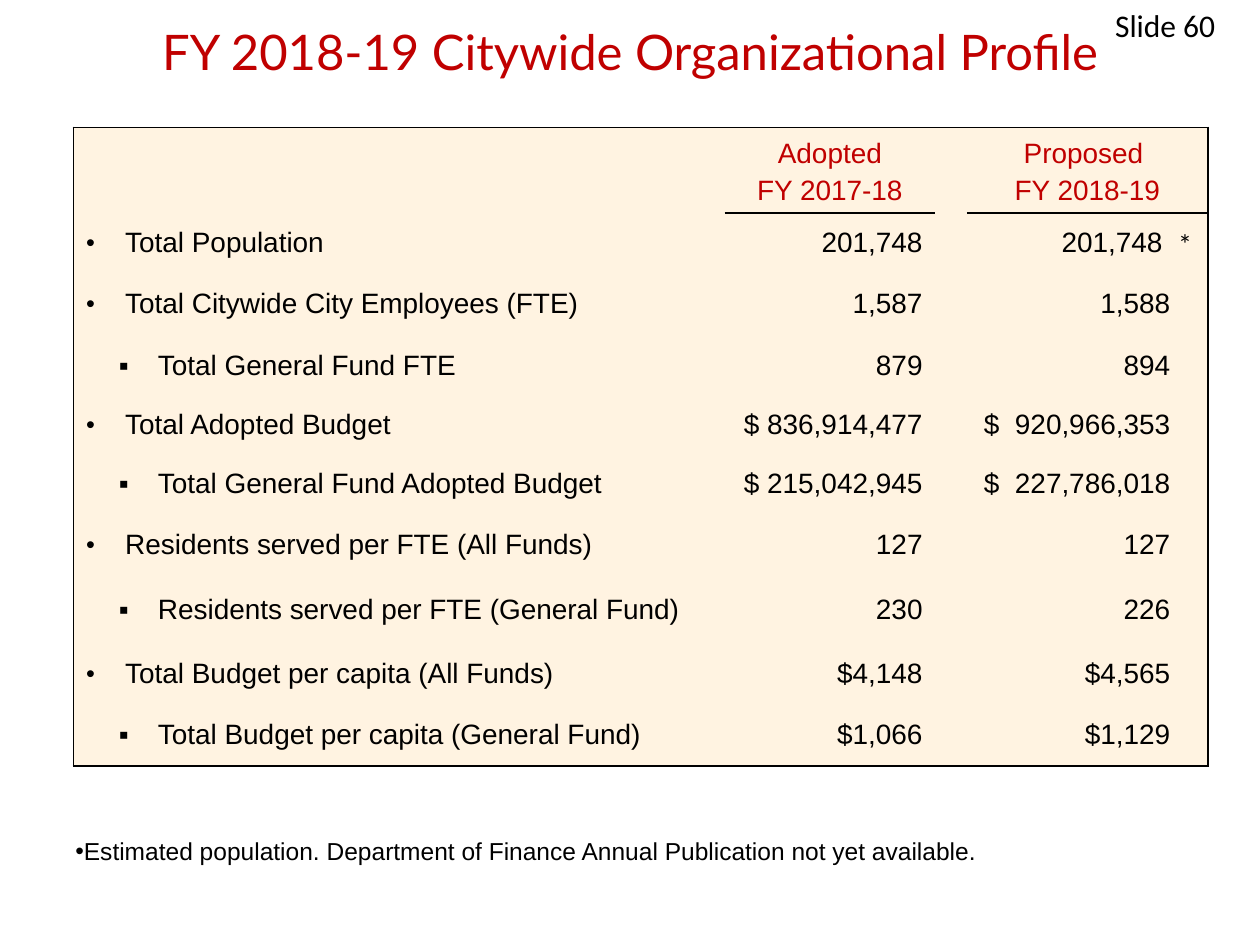
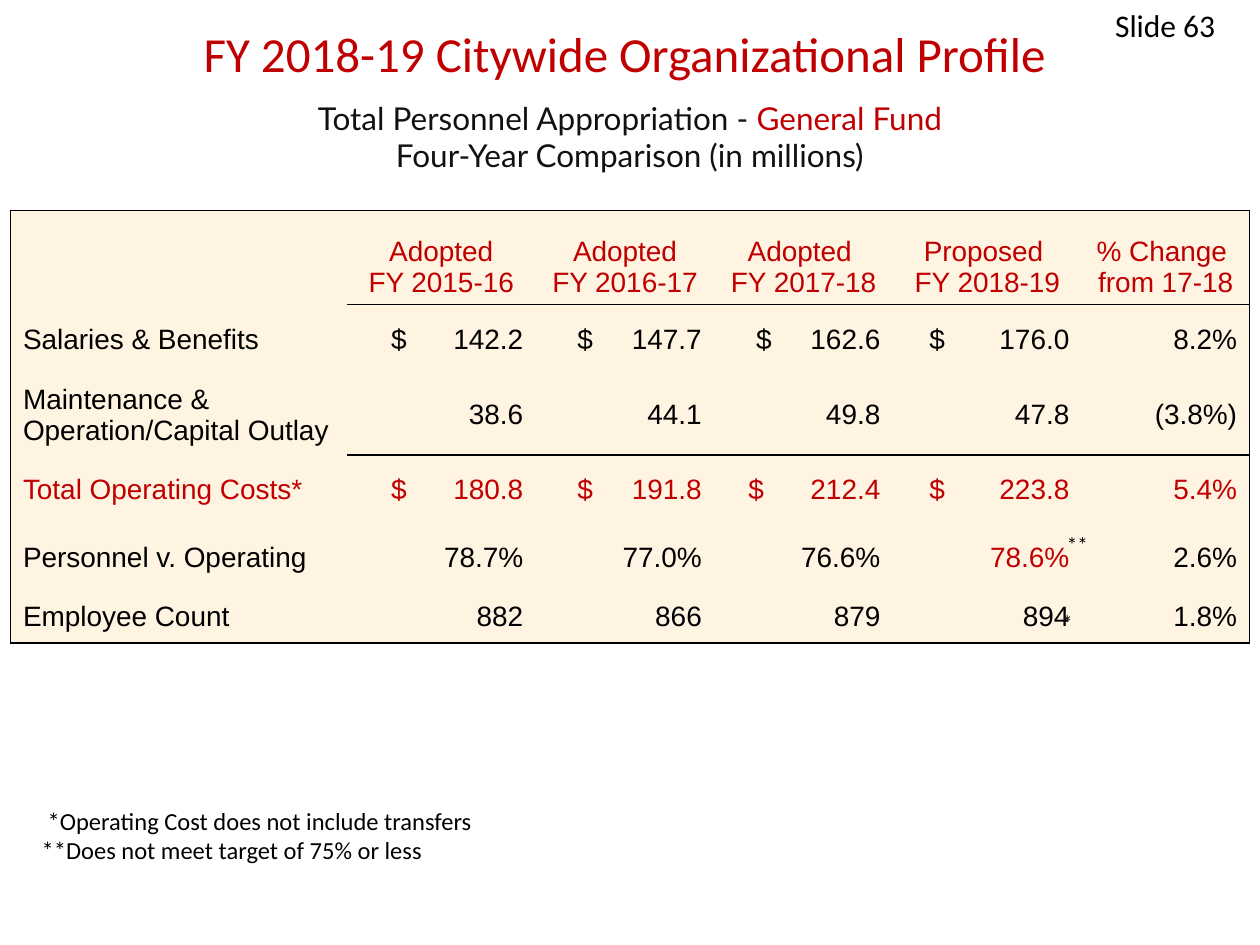
from lxml import etree
from pptx import Presentation
from pptx.dml.color import RGBColor
from pptx.enum.text import MSO_ANCHOR, PP_ALIGN
from pptx.oxml.ns import qn
from pptx.util import Cm, Pt

LEFT, CENTER, RIGHT = PP_ALIGN.LEFT, PP_ALIGN.CENTER, PP_ALIGN.RIGHT
TOP, MIDDLE, BOTTOM = MSO_ANCHOR.TOP, MSO_ANCHOR.MIDDLE, MSO_ANCHOR.BOTTOM
RED, BLACK, DARK, CREAM = "C00000", "000000", "111111", "FFF3E1"
TITLE = "FY 2018-19 Citywide Organizational Profile"
SPACE_WIDTH = 4.45  # points, Arial 16


def rgb(hex_color):
    return RGBColor.from_string(hex_color)


def add_element(parent, tag, **attributes):
    element = etree.SubElement(parent, qn(tag))
    for name, value in attributes.items():
        element.set(name, str(value))
    return element


def write(tf, text, size=16, font="Arial", color=BLACK, align=LEFT, gap=0,
          bullet=None, bullet_size=100, indent=0, hang=0):
    """Fill a text frame; a line is a string or a list of (text, color, tracking) runs.

    gap is the space between paragraphs in percent, tracking is in points.
    """
    lines = text.split("\n") if isinstance(text, str) else text
    for i, line in enumerate(lines):
        p = tf.add_paragraph() if i else tf.paragraphs[0]
        pPr = p._p.get_or_add_pPr()
        pPr.set("marL", str(Cm(indent)))
        pPr.set("indent", str(-Cm(hang)))
        if i and gap:
            add_element(add_element(pPr, "a:spcBef"), "a:spcPct", val=gap * 1000)
        if bullet:
            add_element(pPr, "a:buSzPct", val=bullet_size * 1000)
            add_element(pPr, "a:buFont", typeface="Arial")
            add_element(pPr, "a:buChar", char=bullet)
        p.alignment = align
        runs = [(line, color, 0)] if isinstance(line, str) else line
        for run_text, run_color, tracking in runs:
            r = p.add_run()
            r.text = run_text
            r.font.size, r.font.name, r.font.bold = Pt(size), font, False
            r.font.color.rgb = rgb(run_color)
            if tracking:
                r._r.get_or_add_rPr().set("spc", str(round(tracking * 100)))


def add_text(s, x, y, w, h, text, anchor=TOP, **fmt):
    tf = s.shapes.add_textbox(Cm(x), Cm(y), Cm(w), Cm(h)).text_frame
    tf.word_wrap = True
    tf.vertical_anchor = anchor
    write(tf, text, **fmt)


def add_heading(s, y, title, font, number):
    add_text(s, 0.85, y, 23.7, 1.7, title, anchor=MIDDLE, size=28, font=font,
             color=RED, align=CENTER)
    add_text(s, 22.23, 0, 3.17, 1.27, f"Slide {number}", size=18, font="Calibri")


def style_cell(cell, edges):
    """Draw the named sides (L, R, T, B), clear the others and fill the cell."""
    tcPr = cell._tc.get_or_add_tcPr()
    for side in "LRTB":
        ln = add_element(tcPr, f"a:ln{side}", w=Pt(1))
        if side in edges:
            add_element(add_element(ln, "a:solidFill"), "a:srgbClr", val=BLACK)
        else:
            add_element(ln, "a:noFill")
    cell.fill.solid()
    cell.fill.fore_color.rgb = rgb(CREAM)


def add_grid(s, x, y, widths, heights, rules):
    """Add an outlined cream table; rules holds the (row, column) cells underlined."""
    table = s.shapes.add_table(len(heights), len(widths), Cm(x), Cm(y),
                               Cm(sum(widths)), Cm(sum(heights))).table
    table.first_row = table.horz_banding = False
    for column, width in zip(table.columns, widths):
        column.width = Cm(width)
    for row, height in zip(table.rows, heights):
        row.height = Cm(height)
    last_row, last_col = len(heights) - 1, len(widths) - 1
    for i in range(len(heights)):
        for j in range(len(widths)):
            sides = {"L": j == 0, "R": j == last_col,
                     "T": i == 0 or (i - 1, j) in rules,
                     "B": i == last_row or (i, j) in rules}
            style_cell(table.cell(i, j), [k for k, on in sides.items() if on])
    return table


def fill_cell(cell, text, anchor=MIDDLE, **fmt):
    cell.vertical_anchor = anchor
    write(cell.text_frame, text, **fmt)


def fill_amount(cell, amount, color=BLACK):
    """Write a figure flush right; (spaces, figure) puts a dollar sign that far before it."""
    if isinstance(amount, tuple):
        spaces, figure = amount
        amount = [[("$", color, 0), (" ", color, (spaces - 1) * SPACE_WIDTH),
                   (figure, color, 0)]]
    fill_cell(cell, amount, color=color, align=RIGHT)


PROFILE = [
    (0, "Total Population", "201,748", "201,748 "),
    (0, "Total Citywide City Employees (FTE)", "1,587", "1,588"),
    (1, "Total General Fund FTE", "879", "894"),
    (0, "Total Adopted Budget", (1, "836,914,477"), (2, "920,966,353")),
    (1, "Total General Fund Adopted Budget", (1, "215,042,945"), (2, "227,786,018")),
    (0, "Residents served per FTE (All Funds)", "127", "127"),
    (1, "Residents served per FTE (General Fund)", "230", "226"),
    (0, "Total Budget per capita (All Funds)", "$4,148", "$4,565"),
    (1, "Total Budget per capita (General Fund)", "$1,066", "$1,129"),
]
LEVELS = [dict(bullet="•", bullet_size=90, indent=0.79, hang=0.79),
          dict(bullet="▪", indent=1.45, hang=0.79)]


def profile_table(s, x, y):
    widths = [13.13, 4.24, 0.64, 4.86]
    heights = [1.61, 1.22, 1.24, 1.24, 1.14, 1.24, 1.24, 1.35, 1.24, 1.24]
    table = add_grid(s, x, y, widths, heights, {(0, 1), (0, 3)})
    for j, text in (1, "Adopted\nFY 2017-18"), (3, "Proposed \nFY 2018-19"):
        fill_cell(table.cell(0, j), text, anchor=BOTTOM, color=RED, align=CENTER, gap=20)
    for i, (level, label, adopted, proposed) in enumerate(PROFILE, 1):
        fill_cell(table.cell(i, 0), label, **LEVELS[level])
        fill_amount(table.cell(i, 1), adopted)
        fill_amount(table.cell(i, 3), proposed)
        table.cell(i, 3).margin_right = Cm(0.76)
    add_text(s, x + 22.02, y + 1.88, 1.17, 0.94, "*", font="Calibri")


def profile_slide(s):
    add_heading(s, 0.18, TITLE, "Lato", 60)
    profile_table(s, 1.48, 2.57)
    add_text(s, 1.27, 16.73, 23.29, 0.84,
             "Estimated population. Department of Finance Annual Publication not yet available.",
             size=14, bullet="•")


PERIODS = ["Adopted\nFY 2015-16", "Adopted\nFY 2016-17", "Adopted \nFY 2017-18",
           "Proposed \nFY 2018-19", "% Change \nfrom 17-18"]
PERSONNEL = [
    ("Salaries & Benefits", (6, "142.2"), (5, "147.7"), (5, "162.6"), (7, "176.0"), "8.2%"),
    ("Maintenance & Operation/Capital Outlay", "38.6", "44.1", "49.8", "47.8", "(3.8%)"),
    ("Total Operating Costs*", (6, "180.8"), (5, "191.8"), (6, "212.4"), (7, "223.8"), "5.4%"),
    ("Personnel v. Operating", "78.7%", "77.0%", "76.6%", "78.6%", "2.6%"),
    ("Employee Count", "882", "866", "879", "894", "1.8%"),
]
TOTAL_ROW, OFF_TARGET = 3, (4, 4)


def personnel_table(s, x, y):
    widths = [6.78, 3.81, 3.6, 3.6, 3.81, 3.38]
    heights = [1.9, 1.42, 1.59, 1.42, 1.32, 1.05]
    rules = {(i, j) for i in (0, TOTAL_ROW - 1) for j in range(1, len(widths))}
    table = add_grid(s, x, y, widths, heights, rules)
    for j, period in enumerate(PERIODS, 1):
        fill_cell(table.cell(0, j), period, anchor=BOTTOM, color=RED, align=CENTER)
    for i, (label, *amounts) in enumerate(PERSONNEL, 1):
        row_color = RED if i == TOTAL_ROW else BLACK
        fill_cell(table.cell(i, 0), label, color=row_color)
        for j, amount in enumerate(amounts, 1):
            fill_amount(table.cell(i, j), amount, RED if (i, j) == OFF_TARGET else row_color)
    for dx, dy, mark in (20.95, 7.93, "*"), (21.05, 6.35, "**"):
        add_text(s, x + dx, y + dy, 1.2, 0.76, mark, size=12, font="Calibri")


def personnel_slide(s):
    add_heading(s, 0.22, TITLE + " ", "Calibri", 63)
    add_text(s, 0.85, 1.9, 23.7, 1.7,
             [[("Total Personnel Appropriation - ", DARK, 0), ("General Fund", RED, 0)],
              "Four-Year Comparison (in millions)"],
             anchor=MIDDLE, size=18, font="Lato", color=DARK, align=CENTER)
    personnel_table(s, 0.21, 4.24)
    notes = [("*Operating Cost does not include transfers", 0.12),
             ("**Does not meet target of 75% or less", 0)]
    for i, (note, indent) in enumerate(notes):
        add_text(s, 0.59, 16.12 + 0.59 * i, 16.13, 0.85, note, size=14, font="Calibri",
                 indent=indent)


def main():
    prs = Presentation()
    prs.slide_width, prs.slide_height = Cm(25.4), Cm(19.05)
    for build in profile_slide, personnel_slide:
        build(prs.slides.add_slide(prs.slide_layouts[6]))
    prs.save("out.pptx")


if __name__ == "__main__":
    main()
